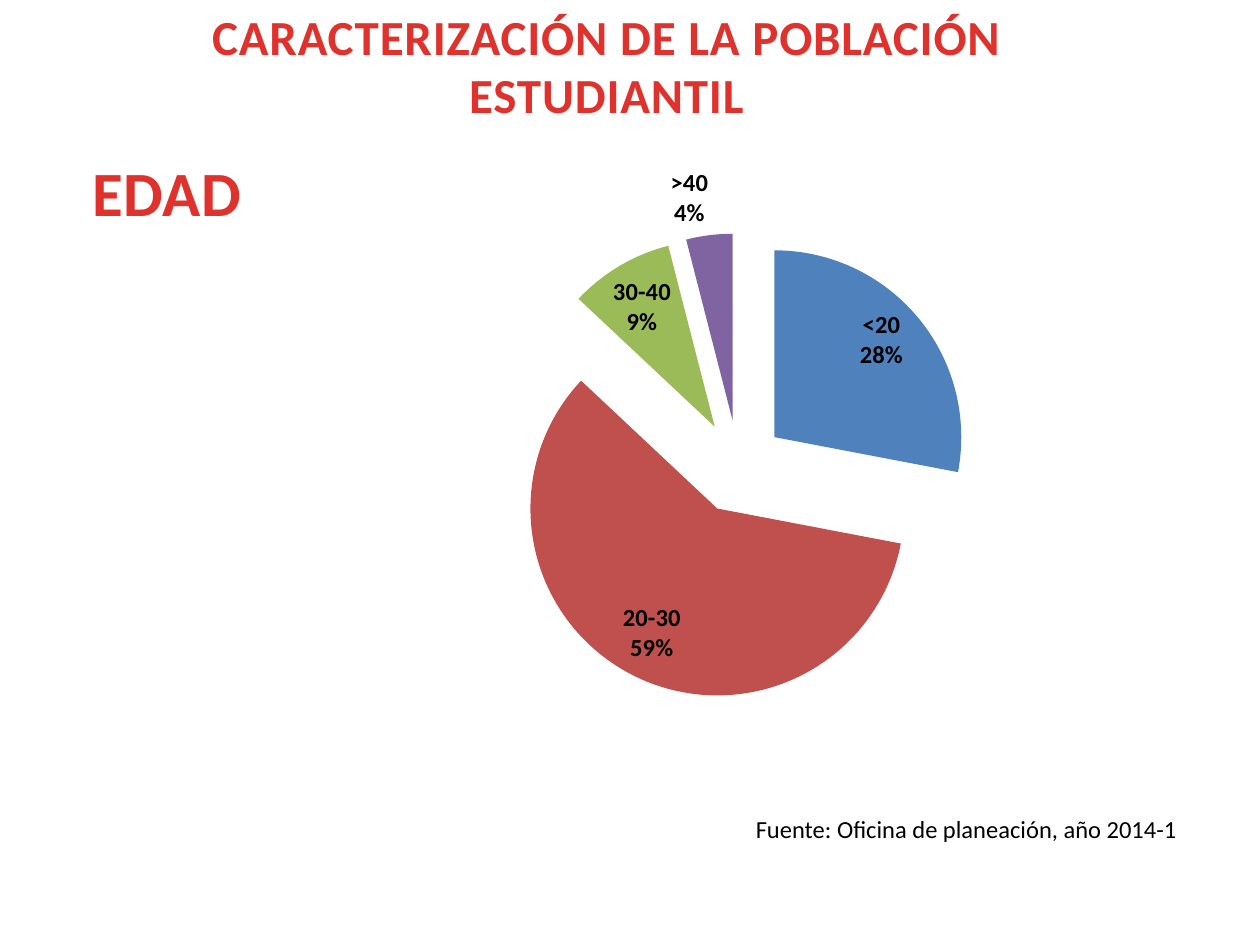
from lxml import etree
from pptx import Presentation
from pptx.chart.data import CategoryChartData
from pptx.dml.color import RGBColor
from pptx.enum.chart import XL_CHART_TYPE as ChartType, XL_LABEL_POSITION as LabelPosition
from pptx.enum.shapes import MSO_SHAPE as Shape
from pptx.enum.text import MSO_ANCHOR as Anchor, PP_ALIGN as Align
from pptx.oxml.ns import qn
from pptx.util import Inches, Pt

FONT = "Calibri"
COLORS = {"heading": "E0322D", "text": "000000", "paper": "FFFFFF"}
AGES = {
    "<20": (28, "4F81BD"),
    "20-30": (59, "C0504D"),
    "30-40": (9, "9BBB59"),
    ">40": (4, "8064A2"),
}
PIE_AREA = {"x": 0.25, "y": 0.15, "w": 0.51, "h": 0.82}
EXPLOSION = 25


def rgb(name):
    """Return a palette colour."""
    return RGBColor.from_string(COLORS[name])


def style_font(font, size, color, bold=False):
    """Apply the slide's typeface with the given size and colour."""
    font.name = FONT
    font.size = Pt(size)
    font.bold = bold
    font.color.rgb = rgb(color)


def add_heading(slide, box, text, size, wrap=True):
    """Add a centred red heading with slightly spaced letters."""
    frame = slide.shapes.add_textbox(*map(Inches, box)).text_frame
    frame.word_wrap = wrap
    frame.text = text
    for paragraph in frame.paragraphs:
        paragraph.alignment = Align.CENTER
        for run in paragraph.runs:
            style_font(run.font, size, "heading", bold=True)
            run.font._element.set("spc", "50")


def add_source_note(slide, box, text):
    """Add the white strip that cites the data source."""
    note = slide.shapes.add_shape(Shape.RECTANGLE, *map(Inches, box))
    note.shadow.inherit = False
    note.fill.solid()
    note.fill.fore_color.rgb = rgb("paper")
    note.line.fill.background()
    frame = note.text_frame
    frame.word_wrap = True
    frame.vertical_anchor = Anchor.TOP
    frame.text = text
    paragraph = frame.paragraphs[0]
    paragraph.alignment = Align.LEFT
    style_font(paragraph.runs[0].font, 14, "text")


def place_pie(chart):
    """Fix the inner plot area as fractions of the chart."""
    plot_area = chart._chartSpace.chart.plotArea
    for old in plot_area.findall(qn("c:layout")):
        plot_area.remove(old)
    layout = etree.Element(qn("c:layout"))
    plot_area.insert(0, layout)
    manual = etree.SubElement(layout, qn("c:manualLayout"))
    settings = {"layoutTarget": "inner", "xMode": "edge", "yMode": "edge", **PIE_AREA}
    for tag, value in settings.items():
        etree.SubElement(manual, qn(f"c:{tag}")).set("val", str(value))


def add_age_pie(slide, box):
    """Add the exploded pie of students by age group."""
    ages = CategoryChartData()
    ages.categories = list(AGES)
    ages.add_series("Edad", [share for share, _ in AGES.values()])
    chart = slide.shapes.add_chart(ChartType.PIE_EXPLODED, *map(Inches, box), ages).chart
    chart.has_legend = False
    chart.has_title = False
    style_font(chart.font, 14, "text", bold=True)
    place_pie(chart)

    plot = chart.plots[0]
    plot.vary_by_categories = True
    series = plot.series[0]
    for explosion in series._element.iter(qn("c:explosion")):
        explosion.set("val", str(EXPLOSION))
    for index, (_, color) in enumerate(AGES.values()):
        fill = series.points[index].format.fill
        fill.solid()
        fill.fore_color.rgb = RGBColor.from_string(color)

    plot.has_data_labels = True
    labels = plot.data_labels
    labels.show_category_name = True
    labels.show_percentage = True
    labels.show_value = False
    labels.number_format = "0%"
    labels.number_format_is_linked = False
    labels.position = LabelPosition.BEST_FIT
    style_font(labels.font, 14, "text", bold=True)
    separator = etree.Element(qn("c:separator"))
    separator.text = "\n"
    labels._element.find(qn("c:showBubbleSize")).addnext(separator)


def main():
    """Build the slide on student ages."""
    deck = Presentation()
    deck.slide_width, deck.slide_height = Inches(10), Inches(7.5)
    slide = deck.slides.add_slide(deck.slide_layouts[6])
    add_heading(slide, (0.41, 0, 8.81, 1.04),
                "CARACTERIZACIÓN DE LA POBLACIÓN\nESTUDIANTIL", 28)
    add_heading(slide, (0.62, 1.17, 1.41, 0.71), "EDAD", 36, wrap=False)
    add_source_note(slide, (5.9, 6.41, 4.1, 0.34),
                    "Fuente: Oficina de planeación, año 2014-1")
    add_age_pie(slide, (2.19, 1.17, 7.27, 4.53))
    deck.save("out.pptx")


if __name__ == "__main__":
    main()
